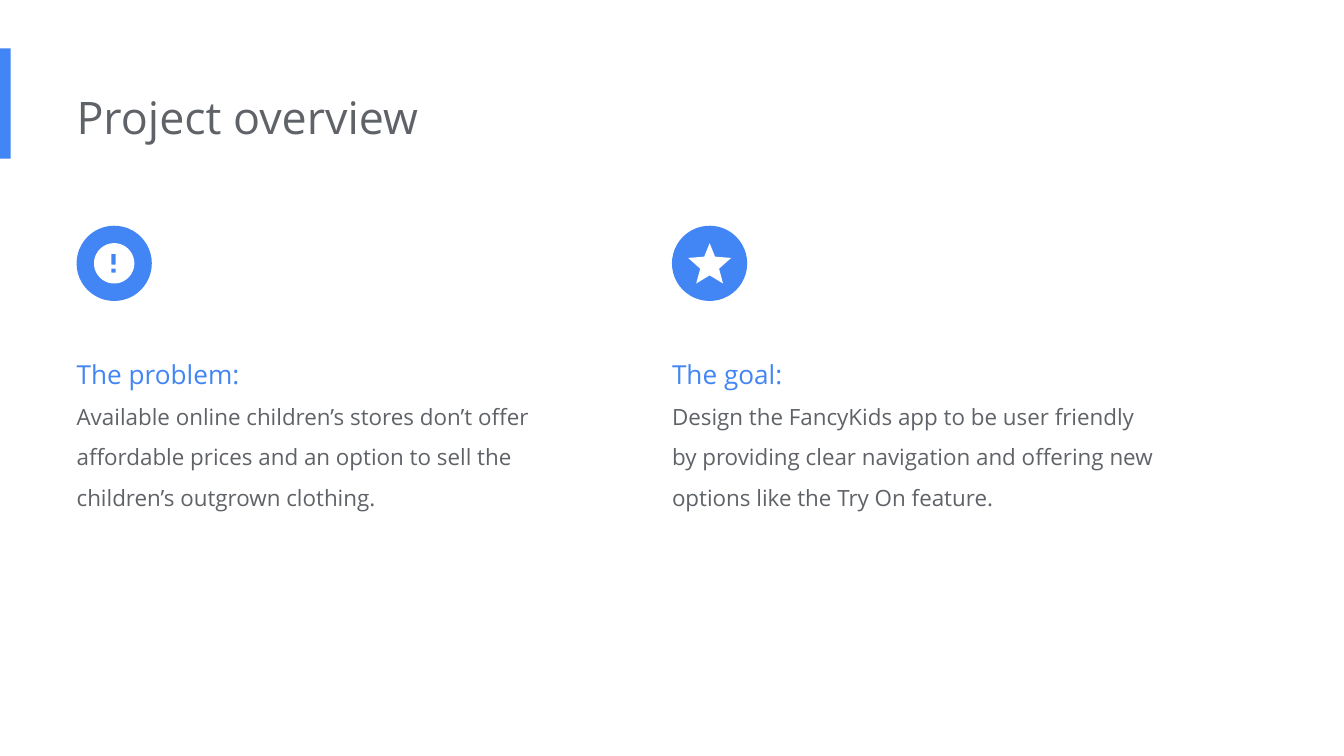
from math import cos, pi, sin

from pptx import Presentation
from pptx.dml.color import RGBColor
from pptx.enum.shapes import MSO_SHAPE
from pptx.enum.text import MSO_AUTO_SIZE
from pptx.util import Inches, Pt

BLUE = RGBColor(0x42, 0x85, 0xF4)
GRAY = RGBColor(0x5F, 0x63, 0x68)
WHITE = RGBColor(0xFF, 0xFF, 0xFF)
FONT = "Open Sans"

SLIDE_WIDTH = 10
SLIDE_HEIGHT = SLIDE_WIDTH * 9 / 16
PROBLEM_LEFT = 0.57
GOAL_LEFT = 5
ICON_TOP = 1.68
ICON_SIZE = 0.56
TEXT_TOP = 2.45

STAR = [(0.28, 0.37), (0.38, 0.43), (0.35, 0.32), (0.44, 0.24), (0.32, 0.23),
        (0.28, 0.13), (0.24, 0.23), (0.12, 0.24), (0.21, 0.32), (0.18, 0.43)]


def style_shape(shape, color):
    shape.shadow.inherit = False
    shape.fill.solid()
    shape.fill.fore_color.rgb = color
    shape.line.fill.background()


def add_filled_shape(slide, kind, left, top, width, height):
    shape = slide.shapes.add_shape(
        kind, Inches(left), Inches(top), Inches(width), Inches(height))
    style_shape(shape, BLUE)


def add_text(slide, left, top, width, height, lines, line_spacing=None):
    box = slide.shapes.add_textbox(
        Inches(left), Inches(top), Inches(width), Inches(height))
    frame = box.text_frame
    frame.word_wrap = True
    frame.auto_size = MSO_AUTO_SIZE.SHAPE_TO_FIT_TEXT
    frame.margin_left = 0
    frame.margin_top = frame.margin_right = frame.margin_bottom = Inches(0.1)
    for index, (text, size, color) in enumerate(lines):
        paragraph = frame.add_paragraph() if index else frame.paragraphs[0]
        paragraph.text = text
        paragraph.line_spacing = line_spacing
        paragraph.font.name = FONT
        paragraph.font.size = Pt(size)
        paragraph.font.color.rgb = color


def rectangle_points(left, top, right, bottom):
    return [(left, top), (right, top), (right, bottom), (left, bottom)]


def circle_points(center, radius, count=72):
    angles = [2 * pi * step / count for step in range(count)]
    return [(center + radius * cos(angle), center + radius * sin(angle))
            for angle in angles]


def add_symbol(slide, left, contours):
    placed = [[(Inches(left + x), Inches(ICON_TOP + y)) for x, y in contour]
              for contour in contours]
    builder = slide.shapes.build_freeform(*placed[0][0])
    for index, contour in enumerate(placed):
        if index:
            builder.move_to(*contour[0])
        builder.add_line_segments(contour[1:], close=True)
    style_shape(builder.convert_to_shape(), WHITE)


def add_column(slide, left, heading, body, symbol):
    add_text(slide, left, TEXT_TOP, 3.75, 1.36,
             [(heading, 14, BLUE), (body, 12, GRAY)], line_spacing=1.5)
    add_filled_shape(slide, MSO_SHAPE.OVAL, left, ICON_TOP, ICON_SIZE, ICON_SIZE)
    add_symbol(slide, left, symbol)


def main():
    presentation = Presentation()
    presentation.slide_width = Inches(SLIDE_WIDTH)
    presentation.slide_height = Inches(SLIDE_HEIGHT)
    slide = presentation.slides.add_slide(presentation.slide_layouts[6])

    exclamation = [
        circle_points(ICON_SIZE / 2, 0.15),
        rectangle_points(0.26, 0.21, 0.29, 0.29),
        rectangle_points(0.26, 0.32, 0.29, 0.35),
    ]

    add_filled_shape(slide, MSO_SHAPE.RECTANGLE, 0, 0.36, 0.08, 0.82)
    add_text(slide, PROBLEM_LEFT, 0.57, 6.73, 0.61,
             [("Project overview", 24, GRAY)])
    add_column(slide, PROBLEM_LEFT, "The problem:",
               "Available online children’s stores don’t offer affordable prices "
               "and an option to sell the children’s outgrown clothing.",
               exclamation)
    add_column(slide, GOAL_LEFT, "The goal:",
               "Design the FancyKids app to be user friendly by providing clear "
               "navigation and offering new options like the Try On feature.",
               [STAR])

    presentation.save("out.pptx")


if __name__ == "__main__":
    main()
